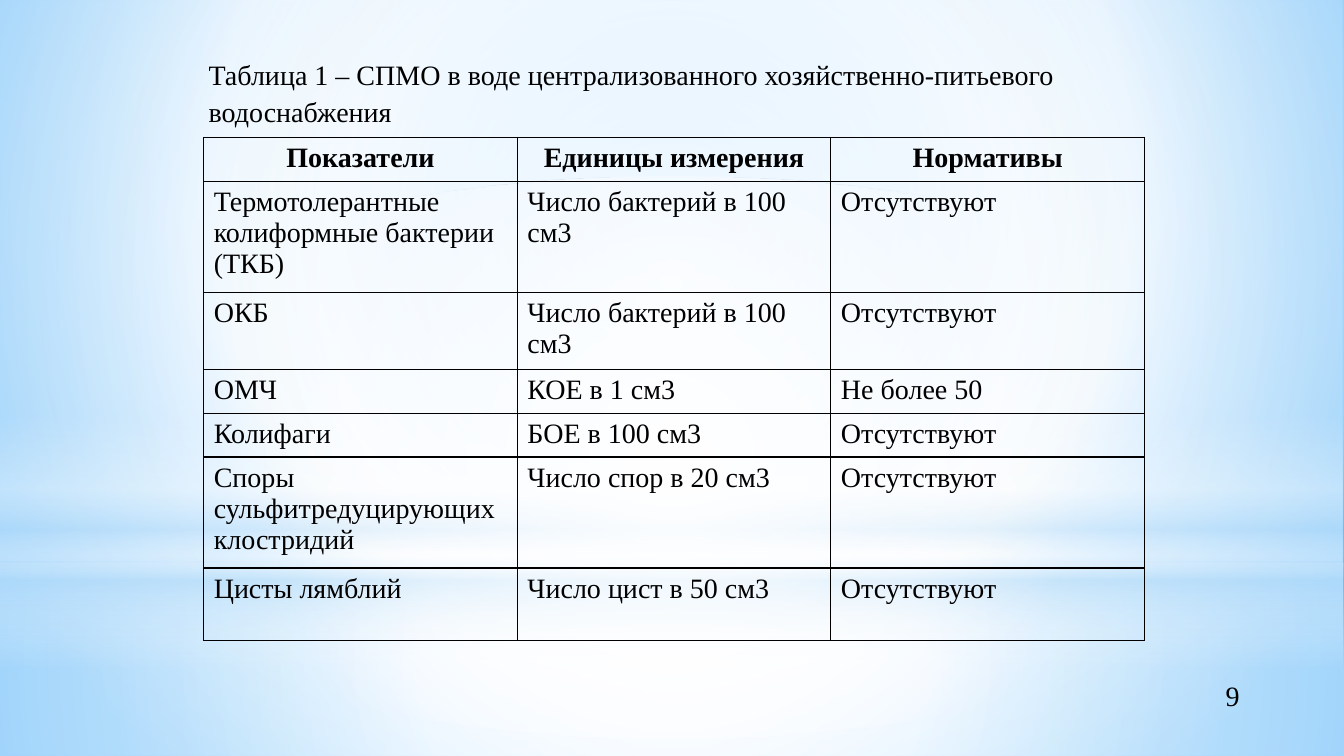
from dataclasses import dataclass

import lxml.etree
import pptx
import pptx.dml.color
import pptx.enum.shapes
import pptx.enum.text
import pptx.oxml
import pptx.oxml.ns
import pptx.util

EMU_PER_PX = 9525
FONT_NAME = "Times New Roman"
FONT_SIZE = pptx.util.Pt(20)
COLORS = {
    "text": "000000",
    "white": "FFFFFF",
    "pale": "B4DCFA",
    "sky": "9ED5FF",
    "blue": "5BB9FF",
}
ALIGN = pptx.enum.text.PP_ALIGN
ANCHOR = pptx.enum.text.MSO_ANCHOR
SHAPE = pptx.enum.shapes.MSO_SHAPE


@dataclass(frozen=True)
class Box:
    left: int
    top: int
    width: int
    height: int

    def emu(self) -> tuple[int, ...]:
        sides = (self.left, self.top, self.width, self.height)
        return tuple(side * EMU_PER_PX for side in sides)


@dataclass(frozen=True)
class Stop:
    position: int
    color: str
    opacity: int = 100


@dataclass(frozen=True)
class Gradient:
    """A circular gradient around focus (left, top, right, bottom), or a linear one at angle."""
    stops: tuple[Stop, ...]
    focus: tuple[int, int, int, int] = (50, 50, 50, 50)
    angle: int | None = None


@dataclass(frozen=True)
class Glow:
    kind: SHAPE
    box: Box
    gradient: Gradient


BACKGROUND = Gradient(
    (Stop(0, "sky"), Stop(60, "white"), Stop(100, "blue")), focus=(20, 10, 20, 60))
GLOWS = (
    Glow(SHAPE.RECTANGLE, Box(0, 536, 1280, 184), Gradient(
        (Stop(0, "white", 91), Stop(37, "white", 76), Stop(100, "pale", 79)))),
    Glow(SHAPE.RECTANGLE, Box(0, 0, 1280, 536), Gradient(
        (Stop(0, "white", 89), Stop(48, "white", 62), Stop(100, "pale", 79)))),
    Glow(SHAPE.RECTANGLE, Box(0, 396, 1280, 240), Gradient(
        (Stop(0, "white", 0), Stop(29, "white", 30), Stop(45, "pale", 40),
         Stop(55, "white", 26), Stop(65, "pale", 60), Stop(100, "white", 0)), angle=90)),
    Glow(SHAPE.OVAL, Box(0, 168, 1280, 536), Gradient(
        (Stop(0, "white"), Stop(56, "white", 0)))),
)

CAPTION = "Таблица 1 – СПМО в воде централизованного хозяйственно-питьевого водоснабжения"
CAPTION_BOX = Box(189, 47, 900, 74)
NUMBER_BOX = Box(76, 643, 1114, 38)
TABLE_BOX = Box(194, 131, 896, 451)
ROW_HEIGHTS = (39, 98, 69, 39, 39, 98, 69)
ROWS = (
    ("Показатели", "Единицы измерения", "Нормативы"),
    ("Термотолерантные колиформные бактерии (ТКБ)", "Число бактерий в 100 см3", "Отсутствуют"),
    ("ОКБ", "Число бактерий в 100 см3", "Отсутствуют"),
    ("ОМЧ", "КОЕ в 1 см3", "Не более 50"),
    ("Колифаги", "БОЕ в 100 см3", "Отсутствуют"),
    ("Споры сульфитредуцирующих клостридий", "Число спор в 20 см3", "Отсутствуют"),
    ("Цисты лямблий", "Число цист в 50 см3", "Отсутствуют"),
)


def replace_solid_fill(properties: lxml.etree._Element, gradient: Gradient) -> None:
    stops = "".join(
        f'<a:gs pos="{stop.position * 1000}"><a:srgbClr val="{COLORS[stop.color]}">'
        f'<a:alpha val="{stop.opacity * 1000}"/></a:srgbClr></a:gs>'
        for stop in gradient.stops)
    if gradient.angle is None:
        sides = " ".join(
            f'{side}="{value * 1000}"' for side, value in zip("ltrb", gradient.focus))
        direction = f'<a:path path="circle"><a:fillToRect {sides}/></a:path>'
    else:
        direction = f'<a:lin ang="{gradient.angle * 60000}" scaled="0"/>'
    fill = pptx.oxml.parse_xml(
        f'<a:gradFill {pptx.oxml.ns.nsdecls("a")} rotWithShape="1">'
        f'<a:gsLst>{stops}</a:gsLst>{direction}</a:gradFill>')
    properties.replace(properties.find(pptx.oxml.ns.qn("a:solidFill")), fill)


def write_text(text_frame: pptx.text.text.TextFrame, text: str,
               alignment: ALIGN = ALIGN.LEFT, bold: bool = False) -> None:
    text_frame.text = text
    text_frame.word_wrap = True
    paragraph = text_frame.paragraphs[0]
    paragraph.alignment = alignment
    font = paragraph.runs[0].font
    font.name = FONT_NAME
    font.size = FONT_SIZE
    font.bold = bold
    font.color.rgb = pptx.dml.color.RGBColor.from_string(COLORS["text"])


def draw_background(slide: pptx.slide.Slide) -> None:
    slide.background.fill.solid()
    replace_solid_fill(slide.element.find(".//" + pptx.oxml.ns.qn("p:bgPr")), BACKGROUND)
    for glow in GLOWS:
        shape = slide.shapes.add_shape(glow.kind, *glow.box.emu())
        shape.shadow.inherit = False
        shape.line.fill.background()
        shape.fill.solid()
        replace_solid_fill(shape.element.spPr, glow.gradient)


def add_borders(cell: pptx.table._Cell) -> None:
    properties = cell._tc.get_or_add_tcPr()
    for side in "LRTB":
        properties.append(pptx.oxml.parse_xml(
            f'<a:ln{side} {pptx.oxml.ns.nsdecls("a")} w="{pptx.util.Pt(1)}"><a:solidFill>'
            f'<a:srgbClr val="{COLORS["text"]}"/></a:solidFill></a:ln{side}>'))


def draw_table(slide: pptx.slide.Slide) -> None:
    table = slide.shapes.add_table(len(ROWS), len(ROWS[0]), *TABLE_BOX.emu()).table
    table.first_row = False
    table.horz_banding = False
    for row_index, (height, texts) in enumerate(zip(ROW_HEIGHTS, ROWS)):
        table.rows[row_index].height = height * EMU_PER_PX
        is_header = row_index == 0
        for column_index, text in enumerate(texts):
            cell = table.cell(row_index, column_index)
            alignment = ALIGN.CENTER if is_header else ALIGN.LEFT
            write_text(cell.text_frame, text, alignment, bold=is_header)
            add_borders(cell)
            cell.fill.background()


def draw_number(slide: pptx.slide.Slide) -> None:
    text_frame = slide.shapes.add_textbox(*NUMBER_BOX.emu()).text_frame
    write_text(text_frame, "9", ALIGN.RIGHT)
    text_frame.vertical_anchor = ANCHOR.MIDDLE


def draw_caption(slide: pptx.slide.Slide) -> None:
    """Format the title and bring it in front of the background shapes."""
    title = slide.shapes.title
    title.left, title.top, title.width, title.height = CAPTION_BOX.emu()
    write_text(title.text_frame, CAPTION)
    title.text_frame.vertical_anchor = ANCHOR.TOP
    title.text_frame.auto_size = pptx.enum.text.MSO_AUTO_SIZE.SHAPE_TO_FIT_TEXT
    title.text_frame.paragraphs[0].line_spacing = 1.09
    title.element.getparent().append(title.element)


def main() -> None:
    presentation = pptx.Presentation()
    presentation.slide_width = 1280 * EMU_PER_PX
    presentation.slide_height = 720 * EMU_PER_PX
    slide = presentation.slides.add_slide(presentation.slide_layouts.get_by_name("Title Only"))
    draw_background(slide)
    draw_number(slide)
    draw_table(slide)
    draw_caption(slide)
    presentation.save("out.pptx")


if __name__ == "__main__":
    main()
